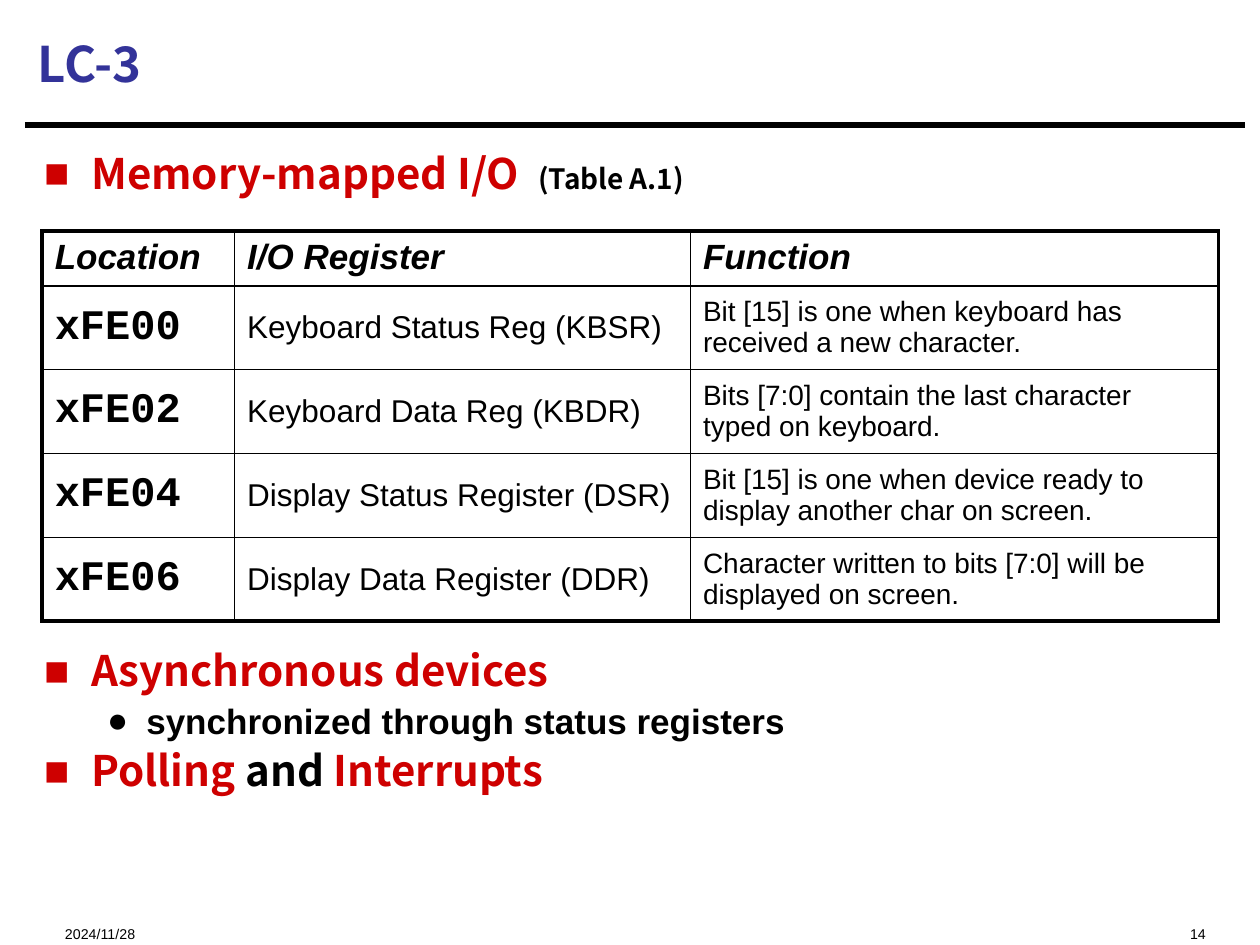
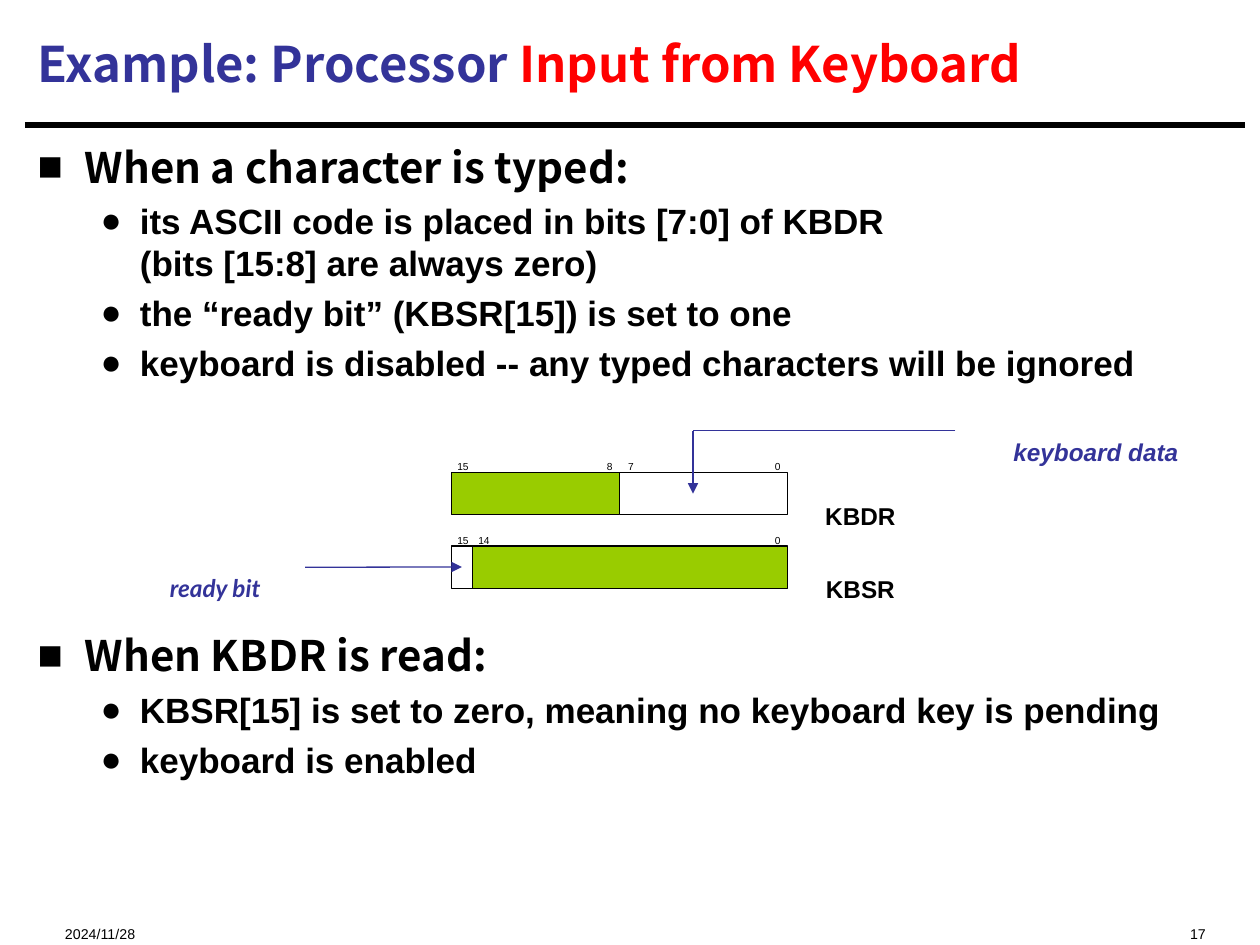
from typing import NamedTuple, Optional

from lxml import etree
from pptx import Presentation
from pptx.dml.color import RGBColor
from pptx.enum.shapes import MSO_CONNECTOR, MSO_SHAPE
from pptx.enum.text import MSO_ANCHOR, PP_ALIGN
from pptx.oxml.ns import qn
from pptx.util import Cm, Pt

BLACK = RGBColor(0x00, 0x00, 0x00)
WHITE = RGBColor(0xFF, 0xFF, 0xFF)
INDIGO = RGBColor(0x33, 0x33, 0x99)
RED = RGBColor(0xFF, 0x00, 0x00)
CRIMSON = RGBColor(0xCE, 0x00, 0x00)
GREEN = RGBColor(0x99, 0xCC, 0x00)

HEADING_FONT = "Noto Sans CJK SC"
TEXT_FONT = "Arial"
CODE_FONT = "Courier New"
ACCENT_FONT = "Lato"

LEFT, CENTER, RIGHT = PP_ALIGN.LEFT, PP_ALIGN.CENTER, PP_ALIGN.RIGHT
TOP, MIDDLE = MSO_ANCHOR.TOP, MSO_ANCHOR.MIDDLE
RECTANGLE, STRAIGHT = MSO_SHAPE.RECTANGLE, MSO_CONNECTOR.STRAIGHT
RIGHT_SIDE = 3

DATE = "2024/11/28"
LOWERED = "-33000"

# Register diagram, in cm
REGISTER_LEFT = 9.1
REGISTER_WIDTH = 6.77
REGISTER_HEIGHT = 0.85
BIT_COUNT = 16
BIT = REGISTER_WIDTH / BIT_COUNT

# Register table, in cm
COLUMN_WIDTHS = (3.88, 9.19, 10.64)
HEADER_HEIGHT, ROW_HEIGHT = 1.09, 1.69
THIN, THICK = Pt(1), Pt(2.25)


class Span(NamedTuple):
    text: str
    color: RGBColor = BLACK
    size: Optional[float] = None


class Level(NamedTuple):
    bullet: str
    font: str
    size: float
    margin: float
    hanging: float
    space_before: float


class Item(NamedTuple):
    level: Level
    spans: tuple[Span, ...]
    space_before: Optional[float] = None


class Style(NamedTuple):
    size: float
    font: str = TEXT_FONT
    color: RGBColor = BLACK
    bold: bool = False
    italic: bool = False


class Field(NamedTuple):
    high: int
    low: int
    fill: RGBColor


class Register(NamedTuple):
    name: str
    top: float
    fields: tuple[Field, ...]


POINT = Level("■", HEADING_FONT, 24, 0.95, 0.95, 5)
DETAIL = Level("●", TEXT_FONT, 20, 2.06, 0.79, 4.5)

TITLE = Style(28, HEADING_FONT, INDIGO, bold=True)
FOOTER = Style(14)
BIT_LABEL = Style(10)
REGISTER_LABEL = Style(24, bold=True)
DATA_LABEL = Style(24, color=INDIGO, bold=True, italic=True)
READY_LABEL = DATA_LABEL._replace(font=ACCENT_FONT)
HEADER_STYLE = Style(20, bold=True, italic=True)
COLUMN_STYLES = (Style(24, CODE_FONT, bold=True), Style(18), Style(16))

TABLE_ROWS = (
    ("Location", "I/O Register", "Function"),
    ("xFE00", "Keyboard Status Reg (KBSR)",
     "Bit [15] is one when keyboard has received a new character."),
    ("xFE02", "Keyboard Data Reg (KBDR)",
     "Bits [7:0] contain the last character typed on keyboard."),
    ("xFE04", "Display Status Register (DSR)",
     "Bit [15] is one when device ready to display another char on screen."),
    ("xFE06", "Display Data Register (DDR)",
     "Character written to bits [7:0] will be displayed on screen."),
)

DEVICE_ITEMS = (
    Item(POINT, (Span("Memory-mapped I/O  ", CRIMSON), Span("(Table A.1)", size=16))),
    Item(POINT, (Span("Asynchronous devices", CRIMSON),), space_before=258.5),
    Item(DETAIL, (Span("synchronized through status registers"),)),
    Item(POINT, (Span("Polling", CRIMSON), Span(" and "), Span("Interrupts", CRIMSON))),
)

KEYBOARD_ITEMS = (
    Item(POINT, (Span("When a character is typed:"),)),
    Item(DETAIL, (Span("its ASCII code is placed in bits [7:0] of KBDR\n"
                       "(bits [15:8] are always zero)"),)),
    Item(DETAIL, (Span("the “ready bit” (KBSR[15]) is set to one"),)),
    Item(DETAIL, (Span("keyboard is disabled -- any typed characters will be ignored"),)),
    Item(POINT, (Span("When KBDR is read:"),), space_before=141),
    Item(DETAIL, (Span("KBSR[15] is set to zero, meaning no keyboard key is pending"),)),
    Item(DETAIL, (Span("keyboard is enabled"),)),
)

REGISTERS = (
    Register("KBDR", 9.53, (Field(15, 8, GREEN), Field(7, 0, WHITE))),
    Register("KBSR", 11.01, (Field(15, 15, WHITE), Field(14, 0, GREEN))),
)


def format_run(run, style: Style) -> None:
    run.font.name = style.font
    run.font.size = Pt(style.size)
    run.font.bold = style.bold
    run.font.italic = style.italic
    run.font.color.rgb = style.color


def add_box(page, left: float, top: float, width: float, height: float):
    box = page.shapes.add_textbox(Cm(left), Cm(top), Cm(width), Cm(height))
    box.text_frame.word_wrap = True
    return box


def add_label(page, text: str, left: float, top: float, width: float, height: float,
              style: Style, align=CENTER):
    """Add one line of text set below the baseline, as subscript."""
    box = add_box(page, left, top, width, height)
    box.text_frame.word_wrap = align != CENTER
    box.text_frame.text = text
    para = box.text_frame.paragraphs[0]
    para.alignment = align
    for run in para.runs:
        format_run(run, style)
        run._r.get_or_add_rPr().set("baseline", LOWERED)
    return box


def add_line(page, start: tuple[float, float], end: tuple[float, float],
             color: RGBColor, width: float, arrow: bool = False):
    line = page.shapes.add_connector(STRAIGHT, *map(Cm, start + end))
    line.line.color.rgb = color
    line.line.width = Pt(width)
    properties = line._element.spPr
    if arrow:
        etree.SubElement(properties.find(qn("a:ln")), qn("a:tailEnd"), type="triangle")
    etree.SubElement(properties, qn("a:effectLst"))
    return line


def add_page(deck, title: tuple[Span, ...], number: int):
    """Add a page with the title, rule and footer that all pages share."""
    page = deck.slides.add_slide(deck.slide_layouts[6])
    add_line(page, (0.5, 2.52), (25.1, 2.52), BLACK, 3.75)
    add_label(page, DATE, 1.06, 18.16, 6.35, 0.69, FOOTER, LEFT)
    add_label(page, str(number), 16.94, 18.16, 7.62, 0.69, FOOTER, RIGHT)
    frame = add_box(page, 0.51, 0.2, 24.56, 2.13).text_frame
    frame.vertical_anchor = MIDDLE
    for span in title:
        run = frame.paragraphs[0].add_run()
        run.text = span.text
        format_run(run, TITLE._replace(color=span.color))
    return page


def add_bullet(para, level: Level) -> None:
    properties = para._p.get_or_add_pPr()
    properties.set("marL", str(Cm(level.margin)))
    properties.set("indent", str(-Cm(level.hanging)))
    etree.SubElement(properties, qn("a:buFont"), typeface=TEXT_FONT)
    etree.SubElement(properties, qn("a:buChar"), char=level.bullet)


def add_body(page, items: tuple[Item, ...], left: float, top: float, width: float,
             height: float, line_spacing: float) -> None:
    frame = add_box(page, left, top, width, height).text_frame
    for index, item in enumerate(items):
        para = frame.add_paragraph() if index else frame.paragraphs[0]
        level = item.level
        para.line_spacing = line_spacing
        if index:
            para.space_before = Pt(item.space_before or level.space_before)
        add_bullet(para, level)
        for span in item.spans:
            for row, text in enumerate(span.text.split("\n")):
                if row:
                    para.add_line_break()
                run = para.add_run()
                run.text = text
                format_run(run, Style(span.size or level.size, level.font, span.color, bold=True))


def set_borders(cell, widths: dict[str, int]) -> None:
    """Draw solid black borders; keys are L, R, T and B in that order."""
    properties = cell._tc.get_or_add_tcPr()
    for index, (side, width) in enumerate(widths.items()):
        border = etree.Element(qn(f"a:ln{side}"), w=str(width))
        fill = etree.SubElement(border, qn("a:solidFill"))
        etree.SubElement(fill, qn("a:srgbClr"), val=str(BLACK))
        properties.insert(index, border)


def add_register_table(page) -> None:
    last_row, last_column = len(TABLE_ROWS) - 1, len(COLUMN_WIDTHS) - 1
    table = page.shapes.add_table(
        len(TABLE_ROWS), len(COLUMN_WIDTHS), Cm(0.85), Cm(4.66),
        Cm(sum(COLUMN_WIDTHS)), Cm(HEADER_HEIGHT + ROW_HEIGHT * last_row)).table
    table.first_row = table.horz_banding = False
    for column, width in zip(table.columns, COLUMN_WIDTHS):
        column.width = Cm(width)
    for r, texts in enumerate(TABLE_ROWS):
        table.rows[r].height = Cm(ROW_HEIGHT if r else HEADER_HEIGHT)
        for c, text in enumerate(texts):
            cell = table.cell(r, c)
            cell.text_frame.text = text
            cell.vertical_anchor = MIDDLE if r else TOP
            cell.fill.background()
            format_run(cell.text_frame.paragraphs[0].runs[0],
                       COLUMN_STYLES[c] if r else HEADER_STYLE)
            set_borders(cell, {
                "L": THIN if c else THICK,
                "R": THICK if c == last_column else THIN,
                "T": THIN if r else THICK,
                "B": THICK if r == last_row else THIN,
            })


def bit_center(bit: int) -> float:
    return REGISTER_LEFT + (BIT_COUNT - bit - 0.5) * BIT


def add_register(page, register: Register) -> None:
    for field in register.fields:
        box = page.shapes.add_shape(
            RECTANGLE, Cm(bit_center(field.high) - BIT / 2), Cm(register.top),
            Cm((field.high - field.low + 1) * BIT), Cm(REGISTER_HEIGHT))
        box.shadow.inherit = False
        box.fill.solid()
        box.fill.fore_color.rgb = field.fill
        box.line.color.rgb = BLACK
        box.line.width = Pt(0.75)
        for bit in sorted({field.high, field.low}, reverse=True):
            width = 0.53 + 0.18 * len(str(bit))
            add_label(page, str(bit), bit_center(bit) - width / 2 + 0.02,
                      register.top - 0.63, width, 0.69, BIT_LABEL)
    add_label(page, register.name, REGISTER_LEFT + REGISTER_WIDTH, register.top - 0.19,
              2.95, 1.27, REGISTER_LABEL)


def build_device_page(deck) -> None:
    page = add_page(deck, (Span("LC-3", INDIGO),), 14)
    add_body(page, DEVICE_ITEMS, 0.64, 2.96, 22.01, 15.45, 0.9)
    add_register_table(page)


def build_keyboard_page(deck) -> None:
    title = (Span("Example: Processor ", INDIGO), Span("Input from Keyboard", RED))
    page = add_page(deck, title, 17)
    add_body(page, KEYBOARD_ITEMS, 0.51, 2.72, 24.56, 15.21, 1.0)
    for register in REGISTERS:
        add_register(page, register)

    add_label(page, "keyboard data", 18.97, 8.05, 6.25, 1.27, DATA_LABEL)
    corner = (13.97, 8.68)
    add_line(page, (19.26, 8.68), corner, INDIGO, 0.75)
    add_line(page, corner, (13.97, 9.95), INDIGO, 0.75, arrow=True)

    ready_box = add_label(page, "ready bit", 2.53, 10.8, 3.62, 1.27, READY_LABEL)
    ready_arrow = add_line(page, (6.15, 11.43), (bit_center(15), 11.43), INDIGO, 0.75, arrow=True)
    ready_arrow.begin_connect(ready_box, RIGHT_SIDE)


def main() -> None:
    deck = Presentation()
    deck.slide_width, deck.slide_height = Cm(25.4), Cm(19.05)
    build_device_page(deck)
    build_keyboard_page(deck)
    deck.save("out.pptx")


if __name__ == "__main__":
    main()
